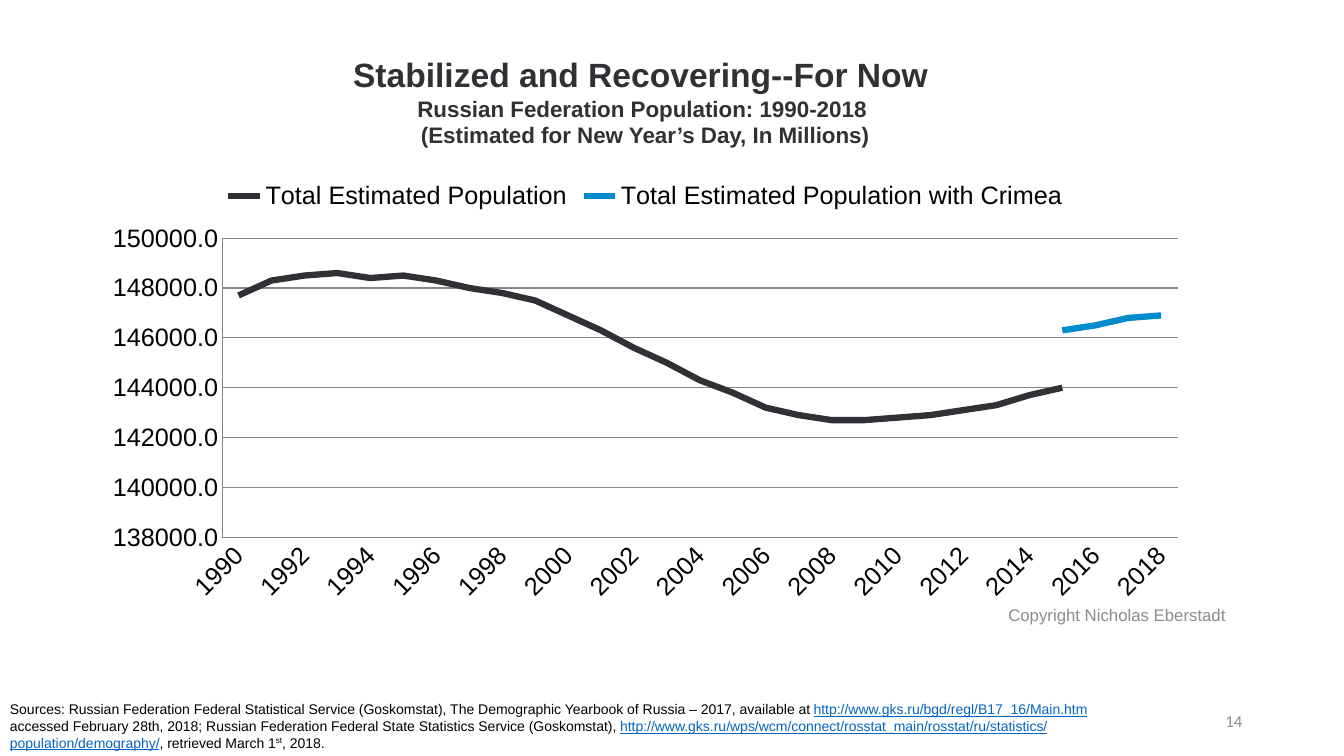
from lxml import etree
from pptx import Presentation
from pptx.chart.data import CategoryChartData
from pptx.dml.color import RGBColor
from pptx.enum.chart import XL_CHART_TYPE as ChartType, XL_LEGEND_POSITION as LegendPos, XL_TICK_MARK as Tick
from pptx.enum.text import MSO_ANCHOR as Anchor, PP_ALIGN as Align
from pptx.oxml.ns import qn
from pptx.util import Inches, Pt

CHARCOAL = RGBColor(0x2F, 0x31, 0x35)
BLUE = RGBColor(0x00, 0x8C, 0xCC)
LINK = RGBColor(0x05, 0x63, 0xC1)
BLACK = RGBColor(0, 0, 0)
GREY = RGBColor(0x8C, 0x8C, 0x8C)
AXIS_GREY = RGBColor(0x86, 0x86, 0x86)

YEARS = range(1990, 2019)
POPULATION = [
    147700, 148300, 148500, 148600, 148400, 148500, 148300, 148000, 147800, 147500,
    146900, 146300, 145600, 145000, 144300, 143800, 143200, 142900, 142700, 142700,
    142800, 142900, 143100, 143300, 143700, 144000]
WITH_CRIMEA = [146300, 146500, 146800, 146900]


def add_text_box(s, left, top, width, height, anchor=Anchor.TOP):
    tf = s.shapes.add_textbox(Inches(left), Inches(top), Inches(width), Inches(height)).text_frame
    tf.word_wrap = True
    tf.vertical_anchor = anchor
    return tf


def add_run(p, text, size, color, font="Arial", bold=False, underline=False, superscript=False):
    r = p.add_run()
    r.text = text
    r.font.name = font
    r.font.size = Pt(size)
    r.font.bold = bold
    r.font.underline = underline
    r.font.color.rgb = color
    if superscript:
        r._r.get_or_add_rPr().set("baseline", "30000")


def add_break(p, size):
    """Break the line without letting the default text size stretch it."""
    p.add_line_break()
    etree.SubElement(p._p[-1], qn("a:rPr"), sz=str(size * 100))


def add_title(s):
    tf = add_text_box(s, 0.9, 0.49, 11, 1.04)
    p = tf.paragraphs[0]
    p.alignment = Align.CENTER
    add_run(p, "Stabilized and Recovering--For Now ", 24, CHARCOAL, bold=True)
    p = tf.add_paragraph()
    p.alignment = Align.CENTER
    add_run(p, "Russian Federation Population: 1990-2018 ", 16, CHARCOAL, bold=True)
    add_break(p, 16)
    add_run(p, "(Estimated for New Year’s Day, In Millions)", 16, CHARCOAL, bold=True)


def style_axis(axis):
    axis.major_tick_mark = axis.minor_tick_mark = Tick.NONE
    axis.format.line.color.rgb = AXIS_GREY
    axis.format.line.width = Pt(0.75)
    axis.tick_labels.font.size = Pt(18)


def slant_year_labels(axis):
    """Turn the labels by 45 degrees and show every second year."""
    axis._element.find(qn("c:txPr")).find(qn("a:bodyPr")).set("rot", "-2700000")
    skip = etree.Element(qn("c:tickLblSkip"), val="2")
    axis._element.find(qn("c:noMultiLvlLbl")).addprevious(skip)


def add_population_chart(s):
    data = CategoryChartData(number_format="0.0")
    data.categories = [str(year) for year in YEARS]
    data.add_series("Total Estimated Population",
                    POPULATION + [None] * (len(YEARS) - len(POPULATION)))
    data.add_series("Total Estimated Population with Crimea",
                    [None] * (len(YEARS) - len(WITH_CRIMEA)) + WITH_CRIMEA)
    chart = s.shapes.add_chart(ChartType.LINE, Inches(0.9), Inches(1.68),
                               Inches(11), Inches(4.37), data).chart
    chart.has_title = False
    chart.font.name = "Arial"
    chart.font.size = Pt(18)
    chart.font.color.rgb = BLACK
    chart.has_legend = True
    chart.legend.position = LegendPos.TOP
    chart.legend.include_in_layout = False

    plot = chart.plots[0]
    plot.vary_by_categories = False
    for series, color in zip(plot.series, (CHARCOAL, BLUE)):
        series.smooth = False
        series.format.line.color.rgb = color
        series.format.line.width = Pt(4.5)

    years, people = chart.category_axis, chart.value_axis
    style_axis(years)
    slant_year_labels(years)
    style_axis(people)
    people.minimum_scale, people.maximum_scale, people.major_unit = 138000, 150000, 2000
    people.tick_labels.number_format = "0.0"
    people.tick_labels.number_format_is_linked = False
    people.has_major_gridlines = True
    people.major_gridlines.format.line.color.rgb = AXIS_GREY
    people.major_gridlines.format.line.width = Pt(0.75)


def add_sources(s):
    p = add_text_box(s, 0, 6.9, 10.92, 0.61).paragraphs[0]
    add_run(p, "Sources: Russian Federation Federal Statistical Service (Goskomstat), "
               "The Demographic Yearbook of Russia – 2017, available at ", 10, BLACK)
    add_run(p, "http://www.gks.ru/bgd/regl/B17_16/Main.htm", 10, LINK, underline=True)
    add_run(p, " accessed February 28th, 2018; Russian Federation Federal State "
               "Statistics Service (Goskomstat), ", 10, BLACK)
    add_run(p, "http://www.gks.ru/wps/wcm/connect/rosstat_main/rosstat/ru/statistics/"
               "population/demography/", 10, LINK, underline=True)
    add_run(p, ", retrieved March 1", 10, BLACK)
    add_run(p, "st", 10, BLACK, superscript=True)
    add_run(p, ", 2018.", 10, BLACK)


def add_footer(s, text, left, top, width, align, font):
    p = add_text_box(s, left, top, width, 0.4, Anchor.MIDDLE).paragraphs[0]
    p.alignment = align
    add_run(p, text, 12, GREY, font)


def main():
    prs = Presentation()
    prs.slide_width, prs.slide_height = Inches(13.33), Inches(7.5)
    s = prs.slides.add_slide(prs.slide_layouts[6])
    add_population_chart(s)
    add_title(s)
    add_sources(s)
    add_footer(s, "Copyright Nicholas Eberstadt", 8.83, 5.9, 4.5, Align.CENTER, "Arial")
    add_footer(s, "14", 9.42, 6.95, 3, Align.RIGHT, "Calibri")
    prs.save("out.pptx")


if __name__ == "__main__":
    main()
